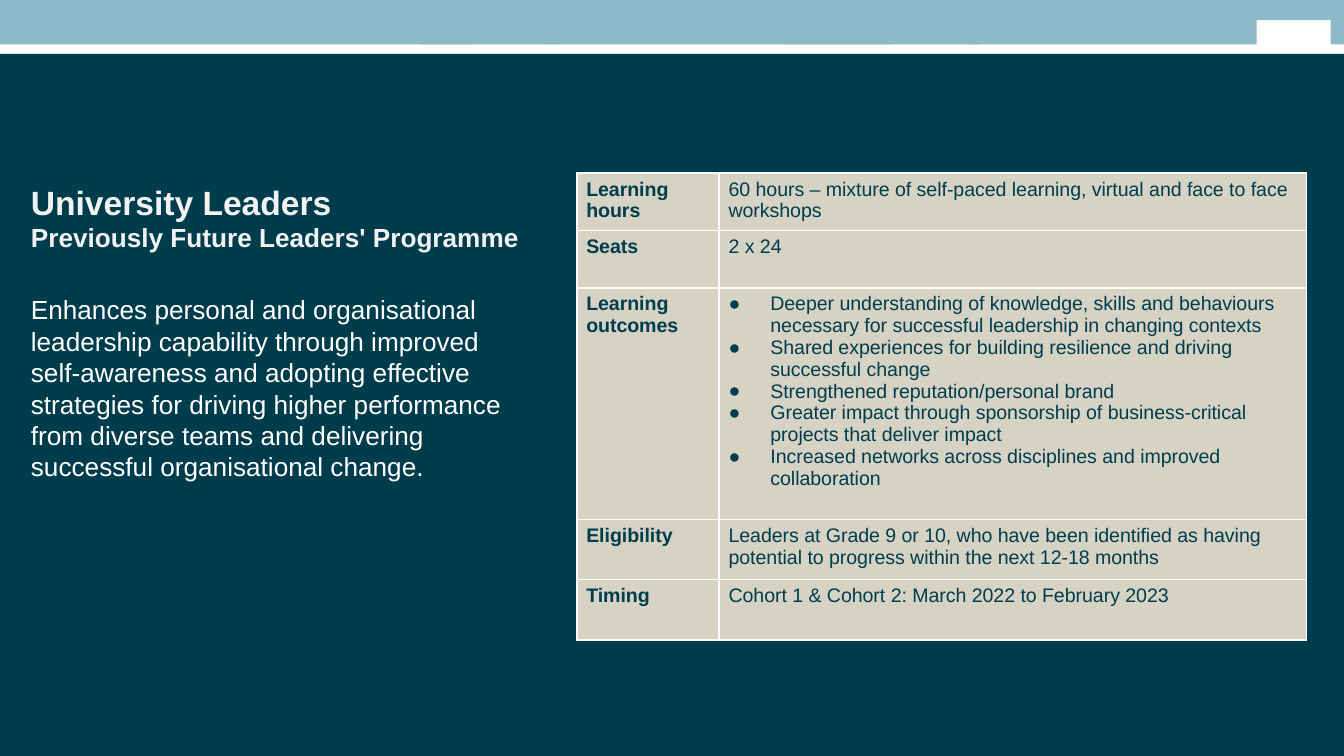
from lxml import etree
from pptx import Presentation
from pptx.dml.color import RGBColor
from pptx.enum.shapes import MSO_SHAPE
from pptx.enum.text import MSO_ANCHOR, MSO_AUTO_SIZE, PP_ALIGN
from pptx.oxml.ns import qn
from pptx.util import Cm, Pt

RECTANGLE = MSO_SHAPE.RECTANGLE
TOP = MSO_ANCHOR.TOP
LEFT = PP_ALIGN.LEFT
GROW = MSO_AUTO_SIZE.SHAPE_TO_FIT_TEXT

WIDTH, HEIGHT = 25.4, 14.28
PANEL_TOP = 1.02
BAND_LEFTS = [7.95, -0.03, 14.81]
WHITE, PALE, TEAL, SKY, SAND = "FFFFFF", "F2F2F2", "003D4C", "8DB9CA", "D6D2C4"

COLUMN_WIDTHS = [2.69, 11.1]
ROW_HEIGHTS = [1.08, 1.09, 4.37, 1.14, 1.14]
DETAILS = [
    ("Learning hours", ["60 hours – mixture of self-paced learning, virtual and "
                        "face to face workshops"]),
    ("Seats", ["2 x 24"]),
    ("Learning outcomes", [
        "Deeper understanding of knowledge, skills and behaviours necessary for "
        "successful leadership in changing contexts",
        "Shared experiences for building resilience and driving successful change",
        "Strengthened reputation/personal brand",
        "Greater impact through sponsorship of business-critical projects that "
        "deliver impact",
        "Increased networks across disciplines and improved collaboration",
    ]),
    ("Eligibility", ["Leaders at Grade 9 or 10, who have been identified as having "
                     "potential to progress within the next 12-18 months"]),
    ("Timing", ["Cohort 1 & Cohort 2: March 2022 to February 2023"]),
]


def color(value):
    return RGBColor.from_string(value)


class SlideBuilder:
    def __init__(self, slide, font="Arial"):
        self.slide = slide
        self.font = font

    def paint(self, shape, fill):
        shape.shadow.inherit = False
        shape.fill.solid()
        shape.fill.fore_color.rgb = color(fill)
        shape.line.fill.background()

    def rectangle(self, left, top, width, height, fill):
        self.paint(self.slide.shapes.add_shape(
            RECTANGLE, Cm(left), Cm(top), Cm(width), Cm(height)), fill)

    def band(self, left, fill, top=-0.03, bottom=0.84, width=10.59):
        """Draw a strip with a plain notch in its lower edge."""
        notch_left, notch_right, notch_top = left + 8.94, left + 10.34, 0.38
        right = left + width
        corners = [
            (left, top), (left, bottom), (notch_left, bottom),
            (notch_left, notch_top), (notch_right, notch_top),
            (notch_right, bottom), (right, bottom), (right, top)]
        points = [(Cm(x), Cm(y)) for x, y in corners]
        outline = self.slide.shapes.build_freeform(*points[0])
        outline.add_line_segments(points[1:])
        self.paint(outline.convert_to_shape(), fill)

    def span(self, para, text, size, ink, bold=False):
        span = para.add_run()
        span.text = text
        span.font.name = self.font
        span.font.size = Pt(size)
        span.font.bold = bold
        span.font.color.rgb = color(ink)

    def bullet(self, para, indent=0.79):
        props = para._p.get_or_add_pPr()
        props.set("marL", str(Cm(indent)))
        props.set("indent", str(-Cm(indent)))
        bullet_color = etree.SubElement(props, qn("a:buClr"))
        etree.SubElement(bullet_color, qn("a:srgbClr"), val=TEAL)
        etree.SubElement(props, qn("a:buFont"), typeface=self.font)
        etree.SubElement(props, qn("a:buChar"), char="●")

    def borders(self, cell, ink=WHITE):
        props = cell._tc.get_or_add_tcPr()
        for side in ("lnL", "lnR", "lnT", "lnB"):
            line = etree.SubElement(props, qn(f"a:{side}"), w=str(Pt(1)))
            fill = etree.SubElement(line, qn("a:solidFill"))
            etree.SubElement(fill, qn("a:srgbClr"), val=ink)

    def cell(self, cell, lines, bold=False):
        self.borders(cell)
        cell.fill.solid()
        cell.fill.fore_color.rgb = color(SAND)
        cell.margin_left = cell.margin_right = Cm(0.18)
        cell.margin_top = cell.margin_bottom = Cm(0.1)
        frame = cell.text_frame
        for index, text in enumerate(lines):
            para = frame.add_paragraph() if index else frame.paragraphs[0]
            if len(lines) > 1:
                self.bullet(para)
            self.span(para, text, 10.5, TEAL, bold)

    def table(self, left, top, widths, heights, rows):
        table = self.slide.shapes.add_table(
            len(heights), len(widths), Cm(left), Cm(top),
            Cm(sum(widths)), Cm(sum(heights))).table
        table.first_row = table.horz_banding = False
        for column, width in zip(table.columns, widths):
            column.width = Cm(width)
        for index, (height, (label, lines)) in enumerate(zip(heights, rows)):
            table.rows[index].height = Cm(height)
            self.cell(table.cell(index, 0), [label], bold=True)
            self.cell(table.cell(index, 1), lines)

    def title(self, left, top, width, height, heading, subheading, summary):
        box = self.slide.shapes.title
        box.element.getparent().append(box.element)  # in front of the panel
        box.left, box.top, box.width, box.height = map(
            Cm, (left, top, width, height))
        frame = box.text_frame
        frame.word_wrap = True
        frame.auto_size = GROW
        frame.vertical_anchor = TOP
        first, second = frame.paragraphs[0], frame.add_paragraph()
        for para, gap in ((first, 0), (second, 21.7)):
            para.alignment = LEFT
            para.line_spacing = 1.0
            para.space_before = Pt(gap)
        self.span(first, heading, 18, PALE, bold=True)
        first.add_line_break()
        self.span(first, subheading, 14, PALE, bold=True)
        self.span(second, summary, 14, WHITE)


def main():
    deck = Presentation()
    deck.slide_width, deck.slide_height = Cm(WIDTH), Cm(HEIGHT)
    page = SlideBuilder(deck.slides.add_slide(deck.slide_layouts[5]))
    for left in BAND_LEFTS:
        page.band(left, SKY)
    page.rectangle(0, PANEL_TOP, WIDTH, HEIGHT - PANEL_TOP, TEAL)
    page.table(10.9, 3.27, COLUMN_WIDTHS, ROW_HEIGHTS, DETAILS)
    page.title(
        0.33, 3.3, 9.86, 6.76,
        "University Leaders", "Previously Future Leaders' Programme",
        "Enhances personal and organisational leadership capability through "
        "improved self-awareness and adopting effective strategies for driving "
        "higher performance from diverse teams and delivering successful "
        "organisational change.")
    deck.save("out.pptx")


if __name__ == "__main__":
    main()
